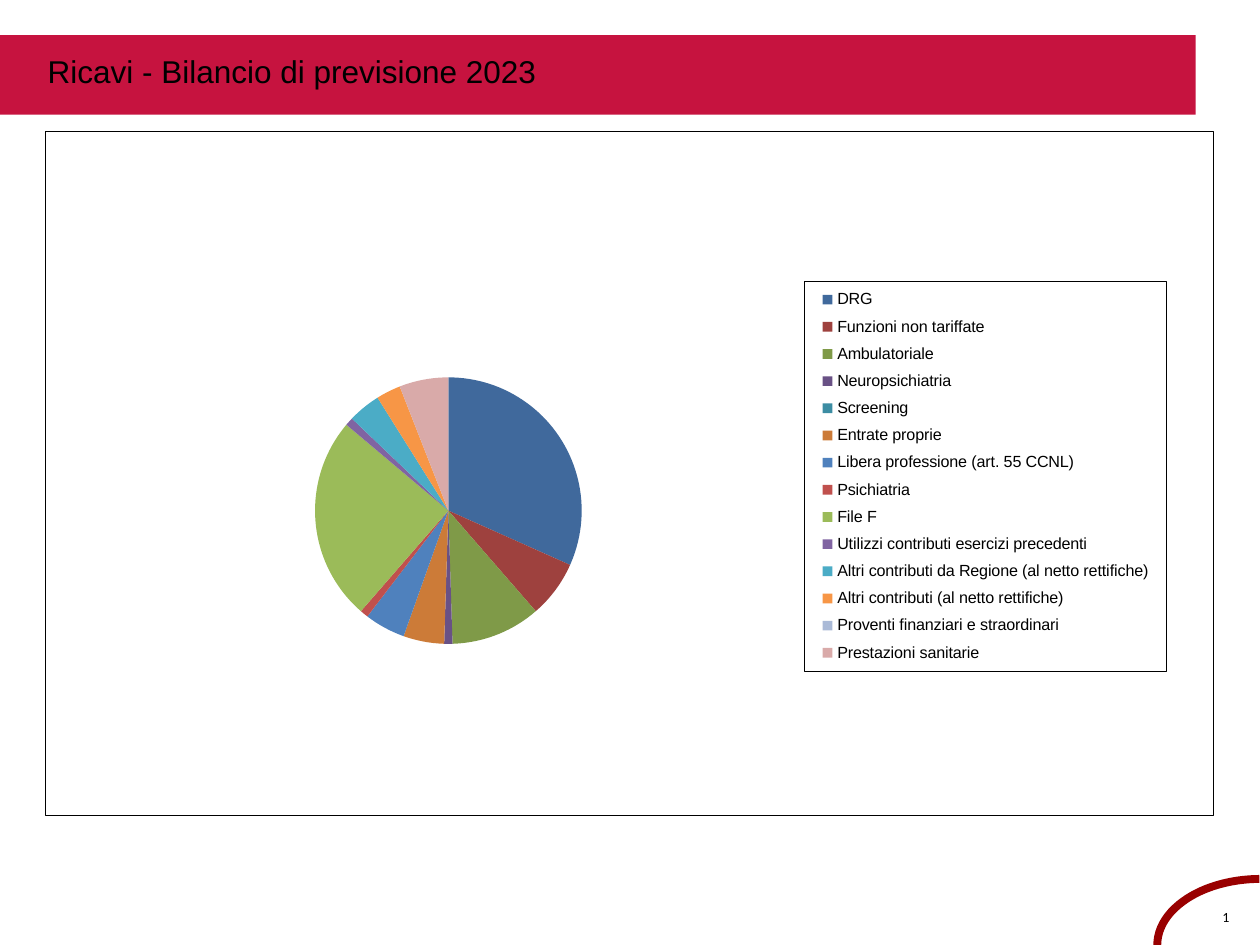
from lxml import etree
from pptx import Presentation
from pptx.chart.data import CategoryChartData
from pptx.dml.color import RGBColor
from pptx.enum.chart import XL_CHART_TYPE, XL_LEGEND_POSITION
from pptx.enum.shapes import MSO_SHAPE
from pptx.enum.text import PP_ALIGN
from pptx.oxml import parse_xml
from pptx.oxml.ns import nsdecls, qn
from pptx.util import Inches, Pt

RECTANGLE = MSO_SHAPE.RECTANGLE
ARC = MSO_SHAPE.ARC
PIE = XL_CHART_TYPE.PIE
LEGEND_RIGHT = XL_LEGEND_POSITION.RIGHT
LEFT = PP_ALIGN.LEFT
CENTER = PP_ALIGN.CENTER

COLORS = {"black": "000000", "white": "FFFFFF", "band": "C6133F", "arc": "990000"}

REVENUES = [
    ("DRG", 32, "40699C"),
    ("Funzioni non tariffate", 7, "9E413E"),
    ("Ambulatoriale", 11, "7F9A48"),
    ("Neuropsichiatria", 1, "695185"),
    ("Screening", 0, "3C8DA3"),
    ("Entrate proprie", 5, "CC7B38"),
    ("Libera professione (art. 55 CCNL)", 5, "4F81BD"),
    ("Psichiatria", 1, "C0504D"),
    ("File F", 25, "9BBB59"),
    ("Utilizzi contributi esercizi precedenti", 1, "8064A2"),
    ("Altri contributi da Regione (al netto rettifiche)", 4, "4BACC6"),
    ("Altri contributi (al netto rettifiche)", 3, "F79646"),
    ("Proventi finanziari e straordinari", 0, "AABAD7"),
    ("Prestazioni sanitarie", 6, "D9AAA9"),
]


def rgb(name):
    return RGBColor.from_string(COLORS[name])


def style_font(font, size, name="Arial"):
    font.size = Pt(size)
    font.name = name
    font.color.rgb = rgb("black")


def add_band(slide, left, top, width, height):
    band = slide.shapes.add_shape(
        RECTANGLE, Inches(left), Inches(top), Inches(width), Inches(height))
    band.shadow.inherit = False
    band.fill.solid()
    band.fill.fore_color.rgb = rgb("band")
    band.line.fill.background()


def add_corner_arc(slide):
    arc = slide.shapes.add_shape(
        ARC, Inches(9.48), Inches(6.68), Inches(1.05), Inches(1.64))
    arc.shadow.inherit = False
    arc.rotation = 270
    arc.adjustments[0] = 162
    arc.adjustments[1] = 215.34
    arc.fill.background()
    arc.line.color.rgb = rgb("arc")
    arc.line.width = Pt(4.5)


def add_text(slide, box, text, size, font_name, alignment, margins):
    text_box = slide.shapes.add_textbox(*(Inches(length) for length in box))
    frame = text_box.text_frame
    frame.word_wrap = True
    (frame.margin_left, frame.margin_top,
     frame.margin_right, frame.margin_bottom) = (Inches(margin) for margin in margins)
    paragraph = frame.paragraphs[0]
    paragraph.alignment = alignment
    run = paragraph.add_run()
    run.text = text
    style_font(run.font, size, font_name)


def set_layout(element, x, y, width, height, inner=False):
    layout = element.find(qn("c:layout"))
    if layout is None:
        layout = parse_xml(f"<c:layout {nsdecls('c')}/>")
        if inner:
            element.insert(0, layout)
        else:
            element.find(qn("c:legendPos")).addnext(layout)
    for child in list(layout):
        layout.remove(child)
    manual = etree.SubElement(layout, qn("c:manualLayout"))
    settings = [("layoutTarget", "inner")] if inner else []
    settings += [("xMode", "edge"), ("yMode", "edge"),
                 ("x", x), ("y", y), ("w", width), ("h", height)]
    for tag, value in settings:
        etree.SubElement(manual, qn(f"c:{tag}")).set("val", str(value))


def frame_properties(line_width):
    return parse_xml(
        f"<c:spPr {nsdecls('c', 'a')}>"
        f"<a:solidFill><a:srgbClr val=\"{COLORS['white']}\"/></a:solidFill>"
        f"<a:ln w=\"{Pt(line_width)}\"><a:solidFill>"
        f"<a:srgbClr val=\"{COLORS['black']}\"/></a:solidFill></a:ln></c:spPr>")


def add_revenue_chart(slide):
    data = CategoryChartData()
    data.categories = [label for label, _, _ in REVENUES]
    data.add_series("Series 1", [value for _, value, _ in REVENUES])
    chart = slide.shapes.add_chart(
        PIE, Inches(0.36), Inches(1.04), Inches(9.27), Inches(5.43), data).chart
    chart.has_title = False
    style_font(chart.font, 11)

    plot = chart.plots[0]
    plot.vary_by_categories = True
    for index, (_, _, color) in enumerate(REVENUES):
        slice_format = plot.series[0].points[index].format
        slice_format.fill.solid()
        slice_format.fill.fore_color.rgb = RGBColor.from_string(color)
        slice_format.line.fill.background()

    chart.has_legend = True
    legend = chart.legend
    legend.position = LEGEND_RIGHT
    legend.include_in_layout = False
    style_font(legend.font, 9.2)

    chart_space = chart.element
    plot_area = chart_space.find(".//" + qn("c:plotArea"))
    legend_element = chart_space.find(".//" + qn("c:legend"))
    set_layout(plot_area, 0.06, 0.36, 0.57, 0.39, inner=True)
    set_layout(legend_element, 0.65, 0.22, 0.31, 0.57)
    legend_element.find(qn("c:txPr")).addprevious(frame_properties(0.25))
    chart_space.find(qn("c:txPr")).addprevious(frame_properties(0.25))


def main():
    presentation = Presentation()
    presentation.slide_width = Inches(10)
    presentation.slide_height = Inches(7.5)
    slide = presentation.slides.add_slide(presentation.slide_layouts[6])

    add_corner_arc(slide)
    add_text(slide, (9.57, 7.18, 0.32, 0.16), "1", 8, "Calibri", CENTER,
             (0, 0.03, 0, 0))
    add_band(slide, 0, 0.28, 9.49, 0.63)
    add_text(slide, (0.28, 0.36, 6.22, 0.71), "Ricavi - Bilancio di previsione 2023",
             18, "Arial", LEFT, (0.1, 0.05, 0.1, 0.05))
    add_revenue_chart(slide)

    presentation.save("out.pptx")


if __name__ == "__main__":
    main()
